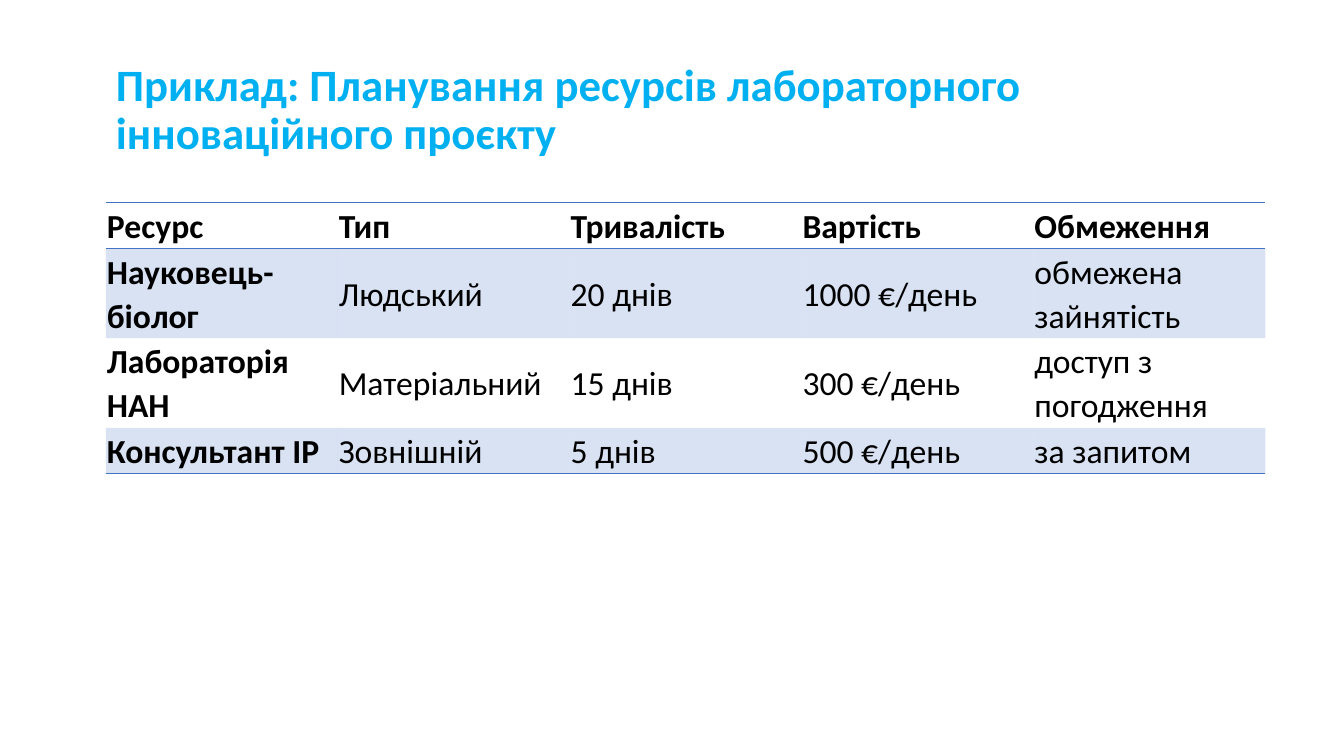
from lxml import etree
from pptx import Presentation
from pptx.dml.color import RGBColor
from pptx.enum.text import MSO_ANCHOR, MSO_AUTO_SIZE, PP_ALIGN
from pptx.oxml.ns import qn
from pptx.util import Inches, Pt

LEFT = PP_ALIGN.LEFT
MIDDLE = MSO_ANCHOR.MIDDLE
NO_AUTOFIT = MSO_AUTO_SIZE.NONE
SKY = RGBColor(0x00, 0xB0, 0xF0)
BLACK = RGBColor(0x00, 0x00, 0x00)
BLUE = RGBColor(0x44, 0x72, 0xC4)
TITLE_ONLY = 5
NO_STYLE_NO_GRID = "{2D5ABB26-0587-4C30-8999-92F81FD0307C}"
TINT_ALPHA = 20000

TITLE = "Приклад: Планування ресурсів лабораторного інноваційного проєкту"
RESOURCES = [
    ["Ресурс", "Тип", "Тривалість", "Вартість", "Обмеження"],
    ["Науковець-біолог", "Людський", "20 днів", "1000 €/день", "обмежена зайнятість"],
    ["Лабораторія НАН", "Матеріальний", "15 днів", "300 €/день", "доступ з погодження"],
    ["Консультант IP", "Зовнішній", "5 днів", "500 €/день", "за запитом"],
]
ROW_HEIGHTS = [0.45, 0.89, 0.89, 0.45]


def apply_format(target, values):
    for name, value in values.items():
        setattr(target, name, value)


class SlideBuilder:
    """Hold the text style and the current slide, and add elements to it."""

    font_name = "Calibri"
    cell_size = Pt(24)
    cell_inset = Inches(0.01)

    def __init__(self, presentation):
        self.slide = presentation.slides.add_slide(presentation.slide_layouts[TITLE_ONLY])

    def add_text(self, text_frame, text, color, paragraph_format, font_format):
        paragraph = text_frame.paragraphs[0]
        apply_format(paragraph, {"alignment": LEFT, **paragraph_format})
        run = paragraph.add_run()
        run.text = text
        apply_format(run.font, {"name": self.font_name, **font_format})
        run.font.color.rgb = color

    def title(self, text, left, top, width, height):
        shape = self.slide.shapes.title
        apply_format(shape, {"left": Inches(left), "top": Inches(top),
                             "width": Inches(width), "height": Inches(height)})
        apply_format(shape.text_frame, {"word_wrap": True, "auto_size": NO_AUTOFIT,
                                        "vertical_anchor": MIDDLE})
        self.add_text(shape.text_frame, text, SKY, {"line_spacing": 0.9},
                      {"size": Pt(32), "bold": True})

    def border(self, cell, side):
        properties = cell._tc.get_or_add_tcPr()
        line = etree.SubElement(properties, qn(f"a:{side}"), w=str(Pt(1)))
        fill = etree.SubElement(line, qn("a:solidFill"))
        etree.SubElement(fill, qn("a:srgbClr"), val=str(BLUE))

    def tint(self, cell):
        cell.fill.solid()
        cell.fill.fore_color.rgb = BLUE
        color = cell._tc.tcPr.find(qn("a:solidFill")).find(qn("a:srgbClr"))
        etree.SubElement(color, qn("a:alpha"), val=str(TINT_ALPHA))

    def table(self, rows, row_heights, left, top, width):
        frame = self.slide.shapes.add_table(len(rows), len(rows[0]), Inches(left), Inches(top),
                                            Inches(width), Inches(sum(row_heights)))
        table = frame.table
        table._tbl.tblPr.find(qn("a:tableStyleId")).text = NO_STYLE_NO_GRID
        for row, height in zip(table.rows, row_heights):
            row.height = Inches(height)
        last = len(rows) - 1
        insets = {f"margin_{side}": self.cell_inset
                  for side in ("left", "right", "top", "bottom")}
        for row_index, row in enumerate(rows):
            for column_index, text in enumerate(row):
                cell = table.cell(row_index, column_index)
                apply_format(cell, {"vertical_anchor": MIDDLE, **insets})
                bold = row_index == 0 or column_index == 0
                self.add_text(cell.text_frame, text, BLACK,
                              {"line_spacing": 1.07, "space_after": Pt(8)},
                              {"size": self.cell_size, "bold": bold})
                if row_index == 0:
                    self.border(cell, "lnT")
                if row_index in (0, last):
                    self.border(cell, "lnB")
                if row_index % 2:
                    self.tint(cell)
                else:
                    cell.fill.background()


def main():
    presentation = Presentation()
    apply_format(presentation, {"slide_width": Inches(13.33), "slide_height": Inches(7.5)})
    builder = SlideBuilder(presentation)
    builder.title(TITLE, 1.05, 0.55, 11.5, 1.1)
    builder.table(RESOURCES, ROW_HEIGHTS, 1.05, 2.01, 11.5)
    presentation.save("out.pptx")


if __name__ == "__main__":
    main()
